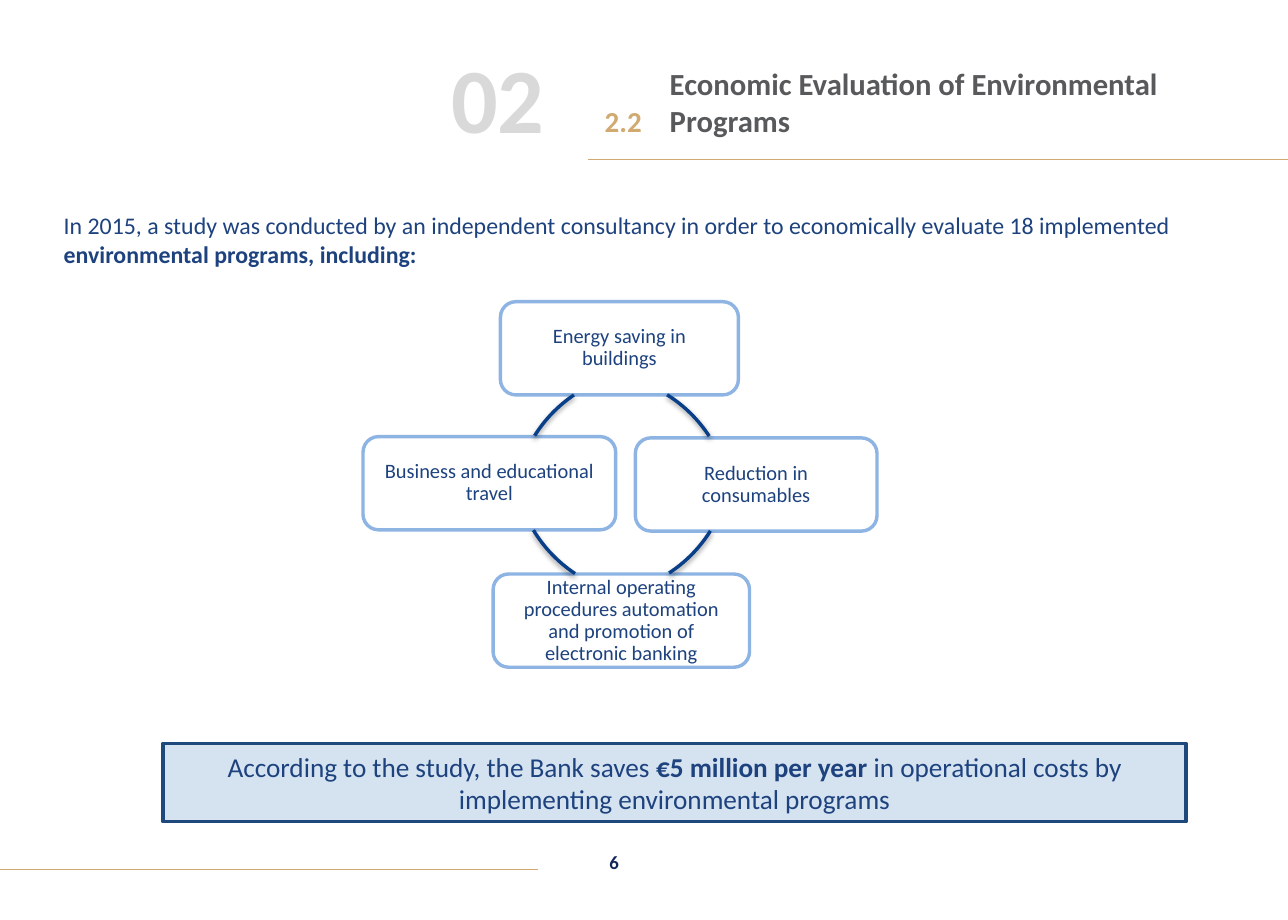
"""Build the slide on the economic evaluation of environmental programs."""
from dataclasses import dataclass

import lxml.etree
import pptx
import pptx.dml.color
import pptx.enum.shapes
import pptx.enum.text
import pptx.oxml
import pptx.oxml.ns
import pptx.util

Inches = pptx.util.Inches
Pt = pptx.util.Pt
ALIGN = pptx.enum.text.PP_ALIGN
ANCHOR = pptx.enum.text.MSO_ANCHOR
SHAPE = pptx.enum.shapes.MSO_SHAPE

COLORS = {
    "navy": "1D427E",
    "page": "11275D",
    "gold": "D1AA71",
    "section": "D9D9D9",
    "title": "58595B",
    "callout": "D5E3F1",
    "border": "1F497D",
    "white": "FFFFFF",
    "box": "8EB4E3",
    "arc": "083F88",
}
ARC_SIZE = 2.22
ARC_SHADOW = (
    '<a:effectLst xmlns:a="http://schemas.openxmlformats.org/drawingml/2006/main">'
    '<a:outerShdw blurRad="39370" dist="20320" dir="5400000" rotWithShape="0">'
    '<a:srgbClr val="000000"><a:alpha val="38000"/></a:srgbClr>'
    "</a:outerShdw></a:effectLst>"
)


@dataclass
class Style:
    size: float
    color: str
    bold: bool = False
    align: ALIGN = ALIGN.LEFT
    anchor: ANCHOR = ANCHOR.TOP
    inset_x: float = 0.1
    inset_y: float = 0.05
    line_spacing: float = 1.0


@dataclass
class Label:
    text: str
    box: tuple[float, float, float, float]
    style: Style
    bold_part: str = ""


@dataclass
class Program:
    text: str
    box: tuple[float, float, float, float]


@dataclass
class Arc:
    left: float
    top: float
    start: float
    end: float


@dataclass
class Rule:
    left: float
    right: float
    top: float


LABELS = [
    Label("02", (2.13, 0.34, 2.31, 0.9),
          Style(54, "section", True, ALIGN.RIGHT, ANCHOR.BOTTOM, 0, 0)),
    Label("2.2", (4.81, 0.34, 0.66, 0.85),
          Style(17, "gold", True, anchor=ANCHOR.BOTTOM, inset_x=0.12, inset_y=0.06)),
    Label("In 2015, a study was conducted by an independent consultancy in order to "
          "economically evaluate 18 implemented environmental programs, including:",
          (0.42, 1.67, 9.48, 0.6), Style(14, "navy"),
          "environmental programs, including:"),
    Label("6", (4.87, 6.83, 0.81, 0.4), Style(11, "page", True, anchor=ANCHOR.MIDDLE)),
]
TITLE = Label("Economic Evaluation of Environmental Programs", (5.33, 0.34, 4.54, 0.85),
              Style(18, "title", True, anchor=ANCHOR.BOTTOM, inset_x=0.13, inset_y=0.06))
CALLOUT = Label("According to the study, the Bank saves €5 million per year in operational "
                "costs by implementing environmental programs", (1.33, 6.06, 8.34, 0.64),
                Style(16, "navy", align=ALIGN.CENTER, anchor=ANCHOR.MIDDLE),
                "€5 million per year ")
PROGRAM_STYLE = Style(12, "navy", False, ALIGN.CENTER, ANCHOR.MIDDLE, 0.09, 0.09, 0.9)
PROGRAMS = [
    Program("Energy saving in buildings", (4.08, 2.46, 1.94, 0.76)),
    Program("Reduction in consumables", (5.18, 3.57, 1.97, 0.76)),
    Program("Internal operating procedures automation and promotion of electronic banking",
            (4.02, 4.68, 2.09, 0.76)),
    Program("Business and educational travel", (2.96, 3.56, 2.06, 0.76)),
]
ARCS = [
    Arc(3.74, 3.05, 302, 327),
    Arc(3.74, 2.63, 32, 57),
    Arc(4.19, 2.64, 123.5, 149),
    Arc(4.19, 3.03, 212, 236),
]
RULES = [Rule(0, 4.39, 7.09), Rule(4.79, 10.5, 1.3)]


def rgb(name: str) -> pptx.dml.color.RGBColor:
    """Return the named colour."""
    return pptx.dml.color.RGBColor.from_string(COLORS[name])


def write_text(shape, text: str, style: Style, bold_part: str = "") -> None:
    """Write one styled paragraph, with an optional bold part."""
    frame = shape.text_frame
    frame.text = text
    frame.word_wrap = True
    frame.auto_size = pptx.enum.text.MSO_AUTO_SIZE.NONE
    frame.vertical_anchor = style.anchor
    frame.margin_left = frame.margin_right = Inches(style.inset_x)
    frame.margin_top = frame.margin_bottom = Inches(style.inset_y)
    paragraph = frame.paragraphs[0]
    paragraph.alignment = style.align
    paragraph.line_spacing = style.line_spacing
    if bold_part:
        before, after = text.split(bold_part)
        paragraph.text = before
        for part in filter(None, (bold_part, after)):
            paragraph.add_run().text = part
    for run in paragraph.runs:
        run.font.name = "Calibri"
        run.font.size = Pt(style.size)
        run.font.bold = style.bold or run.text == bold_part
        run.font.color.rgb = rgb(style.color)


def add_label(slide, label: Label) -> None:
    """Add a text box."""
    shape = slide.shapes.add_textbox(*map(Inches, label.box))
    write_text(shape, label.text, label.style, label.bold_part)


def add_box(slide, kind: SHAPE, label: Label, fill: str, line: str) -> None:
    """Add a filled and outlined shape with text."""
    shape = slide.shapes.add_shape(kind, *map(Inches, label.box))
    shape.shadow.inherit = False
    shape.fill.solid()
    shape.fill.fore_color.rgb = rgb(fill)
    shape.line.color.rgb = rgb(line)
    shape.line.width = Pt(2)
    write_text(shape, label.text, label.style, label.bold_part)


def add_arc(slide, arc: Arc) -> None:
    """Add a shadowed arc between two angles in degrees."""
    shape = slide.shapes.add_shape(SHAPE.ARC, Inches(arc.left), Inches(arc.top),
                                   Inches(ARC_SIZE), Inches(ARC_SIZE))
    shape.adjustments[0] = arc.start * 0.6
    shape.adjustments[1] = arc.end * 0.6
    shape.fill.background()
    shape.line.color.rgb = rgb("arc")
    shape.line.width = Pt(2)
    shape._element.spPr.append(pptx.oxml.parse_xml(ARC_SHADOW))


def add_rule(slide, rule: Rule) -> None:
    """Add a thin horizontal line."""
    connector = slide.shapes.add_connector(
        pptx.enum.shapes.MSO_CONNECTOR.STRAIGHT, Inches(rule.left), Inches(rule.top),
        Inches(rule.right), Inches(rule.top))
    connector.line.color.rgb = rgb("gold")
    connector.line.width = Pt(0.5)
    lxml.etree.SubElement(connector._element.spPr, pptx.oxml.ns.qn("a:effectLst"))


def main() -> None:
    """Create and save the presentation."""
    presentation = pptx.Presentation()
    presentation.slide_width = Inches(10.5)
    presentation.slide_height = Inches(7.5)
    slide = presentation.slides.add_slide(presentation.slide_layouts[5])
    title = slide.shapes.title
    title.left, title.top, title.width, title.height = map(Inches, TITLE.box)
    write_text(title, TITLE.text, TITLE.style)
    for rule in RULES:
        add_rule(slide, rule)
    for label in LABELS:
        add_label(slide, label)
    add_box(slide, SHAPE.RECTANGLE, CALLOUT, "callout", "border")
    for program in PROGRAMS:
        label = Label(program.text, program.box, PROGRAM_STYLE)
        add_box(slide, SHAPE.ROUNDED_RECTANGLE, label, "white", "box")
    for arc in ARCS:
        add_arc(slide, arc)
    presentation.save("out.pptx")


if __name__ == "__main__":
    main()
